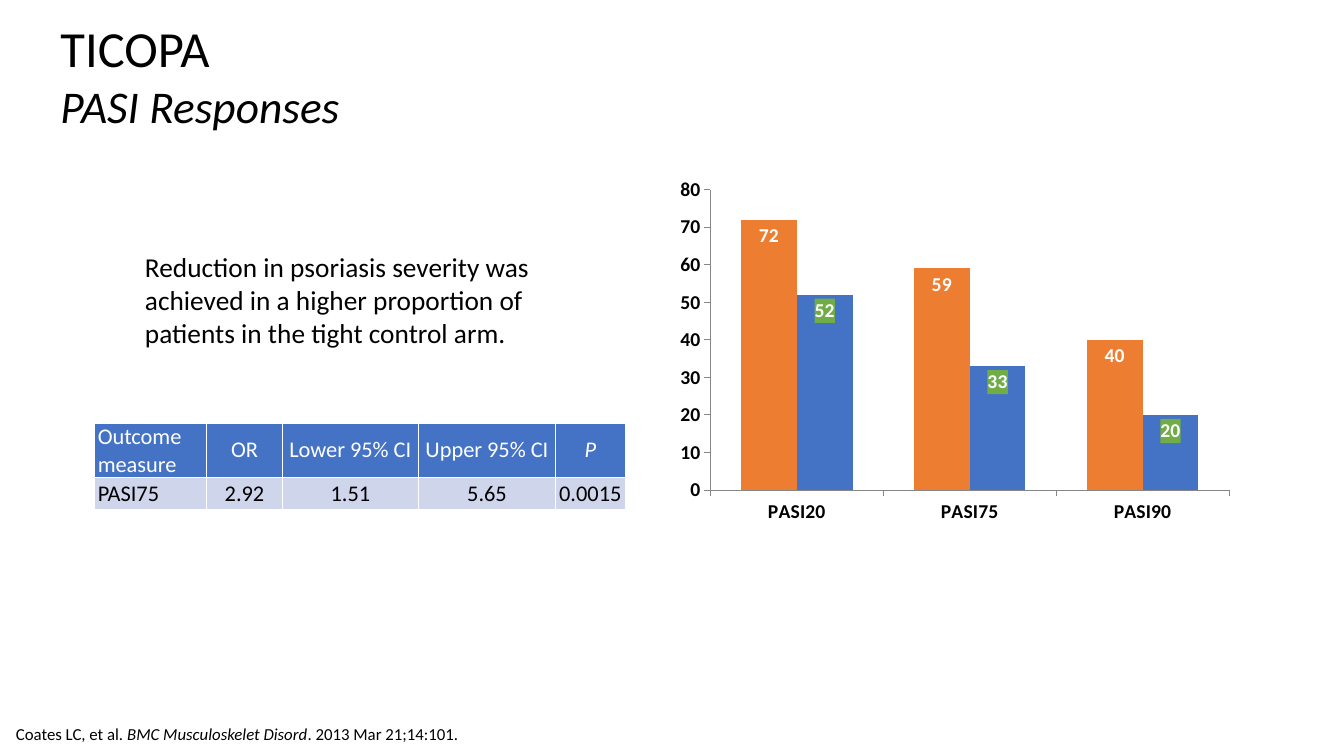
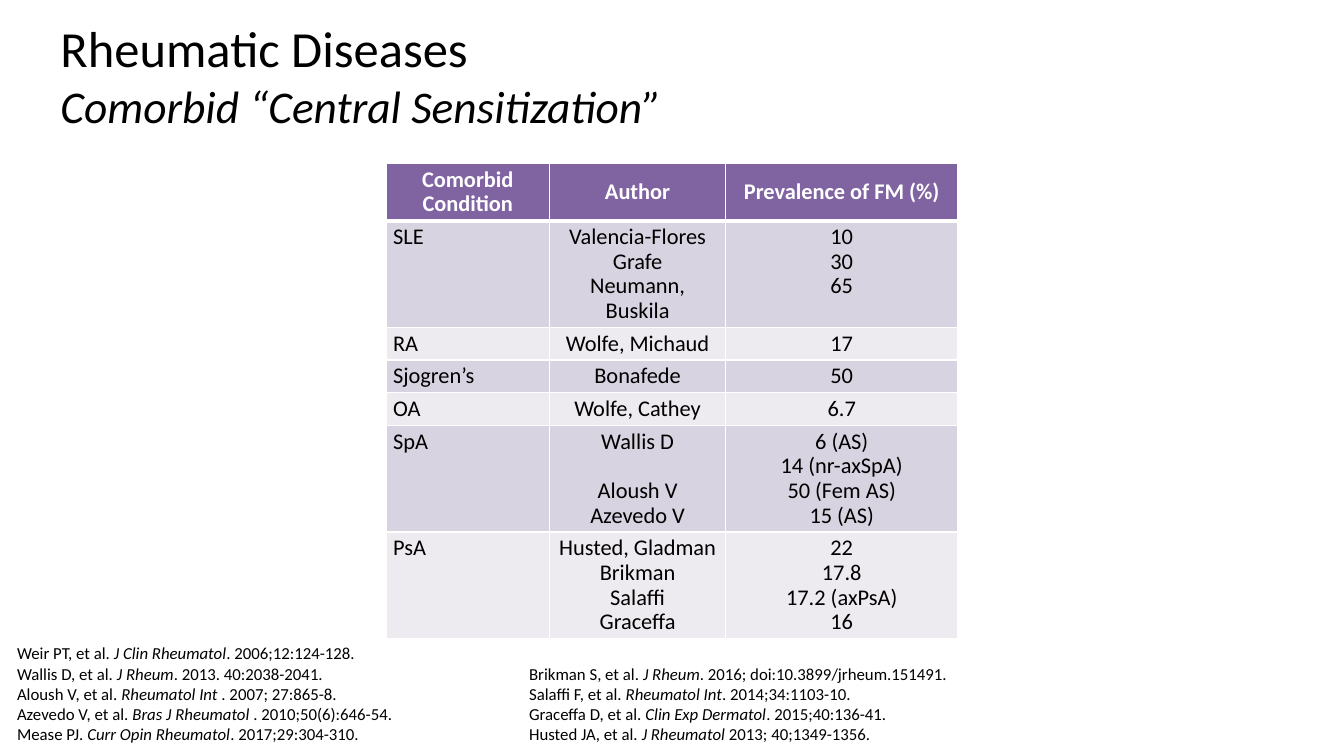
import pptx
import pptx.chart.data
import pptx.dml.color
import pptx.enum.chart
import pptx.enum.text
import pptx.oxml
import pptx.oxml.ns
import pptx.util

ALIGN = pptx.enum.text.PP_ALIGN
ANCHOR = pptx.enum.text.MSO_ANCHOR
AUTO_SIZE = pptx.enum.text.MSO_AUTO_SIZE
TICK = pptx.enum.chart.XL_TICK_MARK

SLIDE_WIDTH = pptx.util.Inches(13.33)
SLIDE_HEIGHT = pptx.util.Inches(7.5)
FONT = "Calibri"
BLACK, WHITE, AXIS_GRAY = "000000", "FFFFFF", "868686"
ORANGE, BLUE, GREEN, PURPLE = "ED7D31", "4472C4", "70AD47", "8064A2"

TITLE_BOX = (3.75, 2.67, 87.68, 14.4)
TITLE_SIZES = (36.1, 32.4)

OUTCOME_TABLE = {
    "corner": (7.05, 56),
    "columns": (8.33, 5.63, 10.13, 10.2, 5.18),
    "rows": (6.67, 3.07),
    "header_fill": BLUE,
    "body_fills": ("CFD5EA",),
    "header_bold": False,
    "header_first_align": ALIGN.LEFT,
    "header_rule": 1,
    "line_spacing": 1.0,
    "side_margin": 0.03,
    "header_margin": 0,
    "body_margin": 0.03,
}
OUTCOME_CELLS = [
    ["Outcome measure", "OR", "Lower 95% CI", "Upper 95% CI", "*P*"],
    ["PASI75", "2.92", "1.51", "5.65", "0.0015"],
]

PREVALENCE_TABLE = {
    "corner": (28.73, 21.6),
    "columns": (12.15, 13.13, 17.25),
    "rows": (6.67, 9.33, 4, 4, 4, 10.27, 10.27),
    "header_fill": PURPLE,
    "body_fills": ("D8D3E0", "EDEAF0"),
    "header_bold": True,
    "header_first_align": ALIGN.CENTER,
    "header_rule": 3,
    "line_spacing": 0.9,
    "side_margin": 0.07,
    "header_margin": 0.04,
    "body_margin": 0.04,
}
PREVALENCE_CELLS = [
    ["Comorbid Condition", "Author", "Prevalence of FM (%)"],
    ["SLE", "Valencia-Flores\nGrafe\nNeumann, Buskila", "10\n30\n65"],
    ["RA", "Wolfe, Michaud", "17"],
    ["Sjogren’s", "Bonafede", "50"],
    ["OA", "Wolfe, Cathey", "6.7"],
    ["SpA", "Wallis D\nAloush V\nAzevedo V",
     "6 (AS)\n14 (nr-axSpA)\n50 (Fem AS)\n15 (AS)"],
    ["PsA", "Husted, Gladman\nBrikman\nSalaffi\nGraceffa",
     "22\n17.8\n17.2 (axPsA)\n16"],
]

LEFT_REFERENCES = [
    "Weir PT, et al. *J Clin Rheumatol*. 2006;12:124-128.",
    "Wallis D, et al. *J Rheum*. 2013. 40:2038-2041.",
    "Aloush V, et al. *Rheumatol Int *. 2007; 27:865-8.",
    "Azevedo V, et al. *Bras J Rheumatol *. 2010;50(6):646-54.",
    "Mease PJ. *Curr Opin Rheumatol*. 2017;29:304-310.",
]
RIGHT_REFERENCES = [
    "Brikman S, et al. *J Rheum*. 2016; doi:10.3899/jrheum.151491.",
    "Salaffi F, et al. *Rheumatol Int*. 2014;34:1103-10.",
    "Graceffa D, et al. *Clin Exp Dermatol*. 2015;40:136-41.",
    "Husted JA, et al. *J Rheumatol *2013; 40;1349-1356.",
]


def color(hex_value):
    return pptx.dml.color.RGBColor.from_string(hex_value)


def across(percent):
    return round(SLIDE_WIDTH * percent / 100)


def down(percent):
    return round(SLIDE_HEIGHT * percent / 100)


def place(left, top, width, height):
    """Turn shares of the slide, in percent, into lengths."""
    return across(left), down(top), across(width), down(height)


def apply_format(target, values):
    for name, value in values.items():
        setattr(target, name, value)


def format_font(font, size, hex_value=BLACK, bold=False, italic=False):
    apply_format(font, {"name": FONT, "size": pptx.util.Pt(size),
                        "bold": bold, "italic": italic})
    font.color.rgb = color(hex_value)


def write_paragraphs(text_frame, lines, size, hex_value=BLACK, bold=False,
                     **paragraph_format):
    """Write one paragraph a line; text between asterisks is italic."""
    for index, line in enumerate(lines):
        paragraph = text_frame.paragraphs[0] if index == 0 else text_frame.add_paragraph()
        apply_format(paragraph, paragraph_format)
        for part, text in enumerate(line.split("*")):
            if text:
                run = paragraph.add_run()
                run.text = text
                format_font(run.font, size, hex_value, bold, italic=part % 2 == 1)


def add_titled_slide(presentation, heading, subheading):
    slide = presentation.slides.add_slide(presentation.slide_layouts[5])
    title = slide.shapes.title
    apply_format(title, dict(zip(("left", "top", "width", "height"), place(*TITLE_BOX))))
    apply_format(title.text_frame, {"auto_size": AUTO_SIZE.NONE, "word_wrap": True,
                                    "vertical_anchor": ANCHOR.MIDDLE})
    write_paragraphs(title.text_frame, [heading, f"*{subheading}*"], TITLE_SIZES[0],
                     alignment=ALIGN.LEFT)
    title.text_frame.paragraphs[1].runs[0].font.size = pptx.util.Pt(TITLE_SIZES[1])
    return slide


def add_text(slide, box, lines, size, anchor, auto_size=AUTO_SIZE.NONE):
    text_frame = slide.shapes.add_textbox(*place(*box)).text_frame
    apply_format(text_frame, {"word_wrap": True, "vertical_anchor": anchor,
                              "auto_size": auto_size})
    write_paragraphs(text_frame, lines, size)


def add_references(slide, box, lines):
    add_text(slide, box, lines, 12, ANCHOR.BOTTOM, AUTO_SIZE.SHAPE_TO_FIT_TEXT)


def set_borders(cell, top=1, bottom=1):
    properties = cell._tc.get_or_add_tcPr()
    for side, width in {"L": 1, "R": 1, "T": top, "B": bottom}.items():
        properties.append(pptx.oxml.parse_xml(
            f'<a:ln{side} {pptx.oxml.ns.nsdecls("a")} w="{pptx.util.Pt(width)}">'
            f'<a:solidFill><a:srgbClr val="{WHITE}"/></a:solidFill></a:ln{side}>'))


def fill_cell(cell, text, row, column, style):
    is_header = row == 0
    rule = style["header_rule"]
    set_borders(cell, top=rule if row == 1 else 1, bottom=rule if is_header else 1)
    body_fills = style["body_fills"]
    cell.fill.solid()
    cell.fill.fore_color.rgb = color(
        style["header_fill"] if is_header else body_fills[(row - 1) % len(body_fills)])
    side = pptx.util.Inches(style["side_margin"])
    end = pptx.util.Inches(style["header_margin" if is_header else "body_margin"])
    apply_format(cell, {"margin_left": side, "margin_right": side,
                        "margin_top": end, "margin_bottom": end,
                        "vertical_anchor": ANCHOR.MIDDLE if is_header else ANCHOR.TOP})
    first_align = style["header_first_align"] if is_header else ALIGN.LEFT
    write_paragraphs(cell.text_frame, text.split("\n"), 16,
                     WHITE if is_header else BLACK,
                     is_header and style["header_bold"],
                     alignment=ALIGN.CENTER if column else first_align,
                     line_spacing=style["line_spacing"])


def add_styled_table(slide, cells, style):
    columns, rows = style["columns"], style["rows"]
    box = place(*style["corner"], sum(columns), sum(rows))
    table = slide.shapes.add_table(len(rows), len(columns), *box).table
    for column, width in enumerate(columns):
        table.columns[column].width = across(width)
    for row, height in enumerate(rows):
        table.rows[row].height = down(height)
        for column, text in enumerate(cells[row]):
            fill_cell(table.cell(row, column), text, row, column, style)
    return table


def format_axis(axis):
    apply_format(axis, {"has_major_gridlines": False,
                        "major_tick_mark": TICK.OUTSIDE,
                        "minor_tick_mark": TICK.NONE})
    axis.format.line.color.rgb = color(AXIS_GRAY)
    format_font(axis.tick_labels.font, 14, bold=True)


def set_plot_area(chart, **shares):
    """Fix the inner plot area, given as x, y, w and h shares of the chart."""
    plot_area = chart._chartSpace.chart.plotArea
    for layout in plot_area.findall(pptx.oxml.ns.qn("c:layout")):
        plot_area.remove(layout)
    lengths = "".join(f'<c:{name} val="{share}"/>' for name, share in shares.items())
    plot_area.insert(0, pptx.oxml.parse_xml(
        f'<c:layout {pptx.oxml.ns.nsdecls("c")}><c:manualLayout>'
        '<c:layoutTarget val="inner"/><c:xMode val="edge"/><c:yMode val="edge"/>'
        f'{lengths}</c:manualLayout></c:layout>'))


def format_series(series, fill, label_fill):
    series.format.fill.solid()
    series.format.fill.fore_color.rgb = color(fill)
    labels = series.data_labels
    apply_format(labels, {"show_value": True,
                          "position": pptx.enum.chart.XL_LABEL_POSITION.INSIDE_END})
    format_font(labels.font, 14, WHITE, bold=True)
    if label_fill:
        text_properties = labels._element.find(pptx.oxml.ns.qn("c:txPr"))
        text_properties.addprevious(pptx.oxml.parse_xml(
            f'<c:spPr {pptx.oxml.ns.nsdecls("c", "a")}><a:solidFill>'
            f'<a:srgbClr val="{label_fill}"/></a:solidFill></c:spPr>'))


def add_response_chart(slide, box):
    data = pptx.chart.data.CategoryChartData()
    data.categories = ["PASI20", "PASI75", "PASI90"]
    data.add_series("Series 1", (72, 59, 40))
    data.add_series("Series 2", (52, 33, 20))
    chart = slide.shapes.add_chart(
        pptx.enum.chart.XL_CHART_TYPE.COLUMN_CLUSTERED, *place(*box), data).chart
    apply_format(chart, {"has_title": False, "has_legend": False})
    format_font(chart.font, 14)
    set_plot_area(chart, x=0.14, y=0.07, w=0.76, h=0.67)
    for axis in (chart.category_axis, chart.value_axis):
        format_axis(axis)
    apply_format(chart.value_axis, {"minimum_scale": 0, "maximum_scale": 80,
                                    "major_unit": 10})
    plot = chart.plots[0]
    apply_format(plot, {"gap_width": 110, "overlap": 0, "vary_by_categories": False})
    for series, fill, label_fill in zip(plot.series, (ORANGE, BLUE), (None, GREEN)):
        format_series(series, fill, label_fill)


def build_response_slide(presentation):
    slide = add_titled_slide(presentation, "TICOPA", "PASI Responses")
    add_references(slide, (0.45, 95.07, 49.73, 4),
                   ["Coates LC, et al. *BMC Musculoskelet Disord*. 2013 Mar 21;14:101."])
    add_response_chart(slide, (45.75, 20.93, 50.78, 59.33))
    add_styled_table(slide, OUTCOME_CELLS, OUTCOME_TABLE)
    add_text(slide, (10.05, 29.87, 33.38, 19.6),
             ["Reduction in psoriasis severity was achieved in a higher proportion "
              "of patients in the tight control arm."], 19.5, ANCHOR.MIDDLE)


def build_comorbidity_slide(presentation):
    slide = add_titled_slide(presentation, "Rheumatic Diseases",
                             "Comorbid “Central Sensitization”")
    table = add_styled_table(slide, PREVALENCE_CELLS, PREVALENCE_TABLE)
    second_author = table.cell(5, 1).text_frame.paragraphs[1]
    second_author.space_before = pptx.util.Pt(17.6)
    add_references(slide, (0.53, 84.27, 33.23, 14.8), LEFT_REFERENCES)
    add_references(slide, (38.63, 86.93, 36, 12.13), RIGHT_REFERENCES)


def main():
    presentation = pptx.Presentation()
    apply_format(presentation, {"slide_width": SLIDE_WIDTH, "slide_height": SLIDE_HEIGHT})
    build_response_slide(presentation)
    build_comorbidity_slide(presentation)
    presentation.save("out.pptx")


if __name__ == "__main__":
    main()
